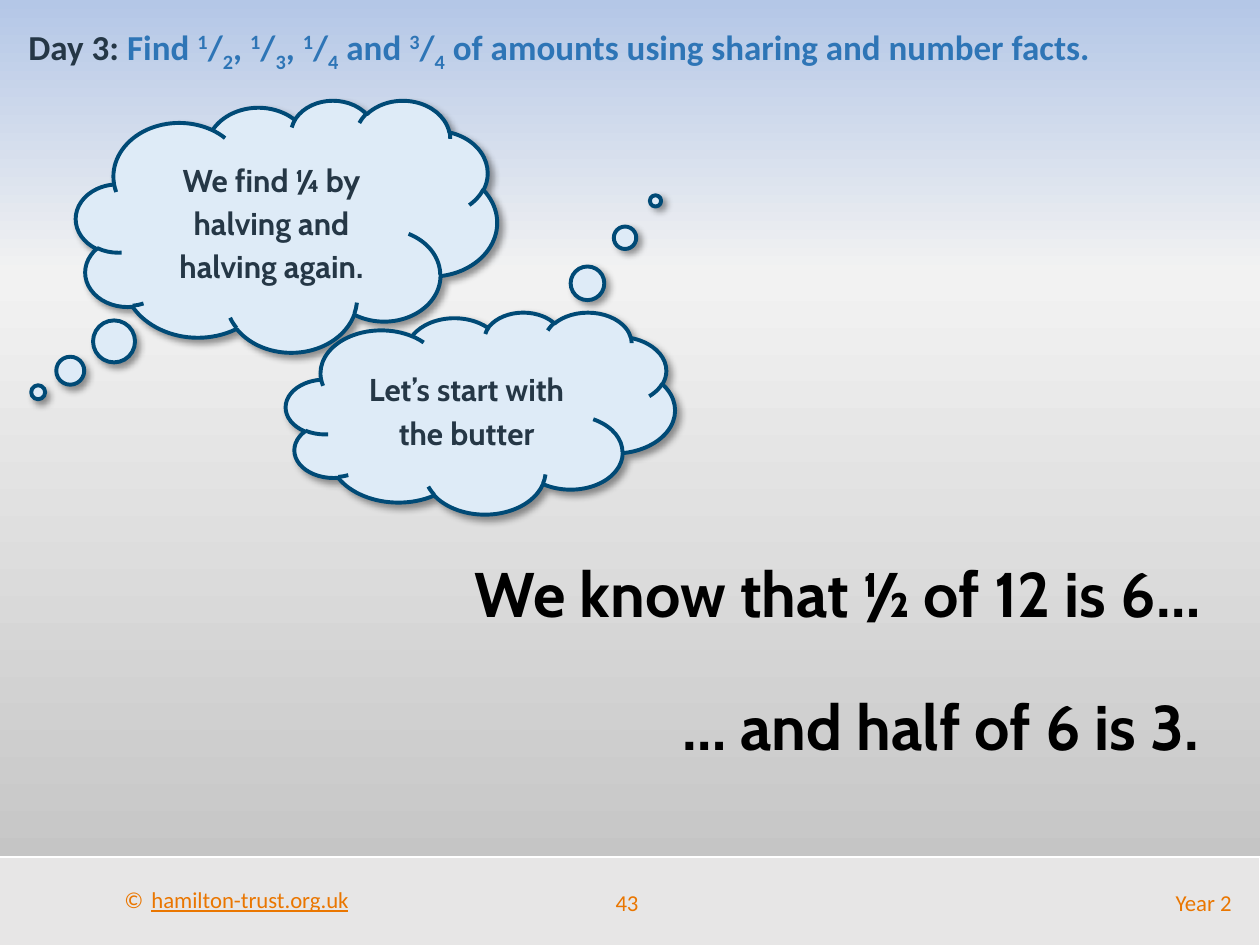
from copy import deepcopy

from lxml import etree
from pptx import Presentation
from pptx import util as u
from pptx.dml.color import RGBColor
from pptx.enum import shapes, text
from pptx.oxml import ns

SCALE = 914400 / 126
NAVY, BLUE, ORANGE = "253746", "2E75B6", "EA7600"
LEFT, CENTER, RIGHT = text.PP_ALIGN.LEFT, text.PP_ALIGN.CENTER, text.PP_ALIGN.RIGHT
TOP, MIDDLE, BOTTOM = text.MSO_ANCHOR.TOP, text.MSO_ANCHOR.MIDDLE, text.MSO_ANCHOR.BOTTOM


def px(length):
    """Turn a length in px into EMU."""
    return u.Emu(round(length * SCALE))


def rgb(code):
    """Turn a hex string into a colour."""
    return RGBColor.from_string(code)


def add_child(parent, tag, **attributes):
    """Append a drawing element with the given attributes."""
    values = {name: str(value) for name, value in attributes.items()}
    return etree.SubElement(parent, ns.qn(tag), values)


def paint_background(slide, stops, angle):
    """Fill the background with a linear gradient."""
    fill = slide.background.fill
    fill.gradient()
    fill.gradient_angle = angle
    stop_list = slide.element.find(".//" + ns.qn("a:gsLst"))
    while len(stop_list) < len(stops):
        stop_list.append(deepcopy(stop_list[0]))
    for stop, (position, color) in zip(fill.gradient_stops, stops):
        stop.color.rgb = rgb(color)
        stop.position = position


def add_run(paragraph, words, size, font, color, bold=False, baseline=0, underline=False):
    """Add one formatted run, raised or lowered by the baseline percentage."""
    run = paragraph.add_run()
    run.text = words
    run.font.size = u.Pt(size)
    run.font.name = font
    run.font.color.rgb = rgb(color)
    run.font.bold = bold
    if underline:
        run.font.underline = True
    if baseline:
        run.font._element.set("baseline", str(baseline * 1000))


def add_label(slide, box, align=LEFT, anchor=TOP, wrap=True):
    """Add a text box and return its paragraph."""
    frame = slide.shapes.add_textbox(*map(px, box)).text_frame
    frame.word_wrap = wrap
    frame.vertical_anchor = anchor
    paragraph = frame.paragraphs[0]
    paragraph.alignment = align
    return paragraph


def add_panel(slide, kind, box, fill, line, width):
    """Add a filled and outlined shape without a theme shadow."""
    panel = slide.shapes.add_shape(kind, *map(px, box))
    panel.shadow.inherit = False
    panel.fill.solid()
    panel.fill.fore_color.rgb = rgb(fill)
    panel.line.color.rgb = rgb(line)
    panel.line.width = u.Pt(width)
    return panel


def add_thought(slide, box, tail, words):
    """Add a thought cloud with a soft shadow."""
    cloud = add_panel(slide, shapes.MSO_SHAPE.CLOUD_CALLOUT, box, "DEEBF7", "004A76", 2.25)
    cloud.adjustments[0], cloud.adjustments[1] = tail
    effects = cloud._element.spPr.find(ns.qn("a:effectLst"))
    shadow = add_child(effects, "a:outerShdw", blurRad=u.Pt(4), dist=u.Pt(3),
                       dir=45 * 60000, algn="tl", rotWithShape=0)
    add_child(add_child(shadow, "a:srgbClr", val="000000"), "a:alpha", val=40000)
    frame = cloud.text_frame
    frame.word_wrap = True
    frame.vertical_anchor = MIDDLE
    paragraph = frame.paragraphs[0]
    paragraph.alignment = CENTER
    paragraph.line_spacing = 1.14
    add_run(paragraph, words, 18, "Cabin", NAVY, bold=True)


def add_title(slide):
    """Add the heading with its raised and lowered fraction digits."""
    title = add_label(slide, (16, 19, 1231, 55))
    add_run(title, "Day 3: ", 20, "Calibri", NAVY, bold=True)
    fractions = [("Find ", "1", "2"), (", ", "1", "3"), (", ", "1", "4"), (" and ", "3", "4")]
    for lead, top, bottom in fractions:
        for words, baseline in ((lead, 0), (top, 30), ("/", 0), (bottom, -25)):
            add_run(title, words, 20, "Calibri", BLUE, bold=True, baseline=baseline)
    add_run(title, " of amounts using sharing and number facts.", 20, "Calibri", BLUE, bold=True)


def add_footer(slide):
    """Add the footer band with copyright, page number and year."""
    add_panel(slide, shapes.MSO_SHAPE.RECTANGLE, (-8, 857, 1268, 91), "E7E6E6", "FFFFFF", 1)
    owner = add_label(slide, (112, 880, 312, 40))
    tabs = add_child(owner._p.get_or_add_pPr(), "a:tabLst")
    add_child(tabs, "a:tab", pos=px(27), algn="l")
    add_run(owner, "©\t", 13, "Calibri", ORANGE)
    add_run(owner, "hamilton-trust.org.uk", 13, "Calibri", ORANGE, underline=True)
    for words, box, align in (("43", (577, 877, 100, 50), CENTER),
                              ("Year 2", (731, 877, 513, 50), RIGHT)):
        add_run(add_label(slide, box, align, MIDDLE), words, 13, "Calibri", ORANGE)


def main():
    """Build and save the slide."""
    deck = Presentation()
    deck.slide_width, deck.slide_height = px(1260), px(945)
    slide = deck.slides.add_slide(deck.slide_layouts[6])
    paint_background(slide, [(0, "B4C7E7"), (0.29, "F2F2F2"), (1, "BFBFBF")], 270)
    add_footer(slide)
    add_title(slide)
    add_thought(slide, (76, 100, 421, 252), (-0.59, 0.66),
                "We find ¼ by halving and halving again.")
    add_thought(slide, (286, 312, 389, 202), (0.45, -1.05), "Let’s start with the butter")
    for words, box, anchor in (("We know that ½ of 12 is 6…", (321, 548, 892, 165), TOP),
                               ("… and half of 6 is 3.", (558, 604, 654, 165), BOTTOM)):
        add_run(add_label(slide, box, RIGHT, anchor, wrap=False), words, 36, "Cabin",
                "000000", bold=True)
    deck.save("out.pptx")


if __name__ == "__main__":
    main()
